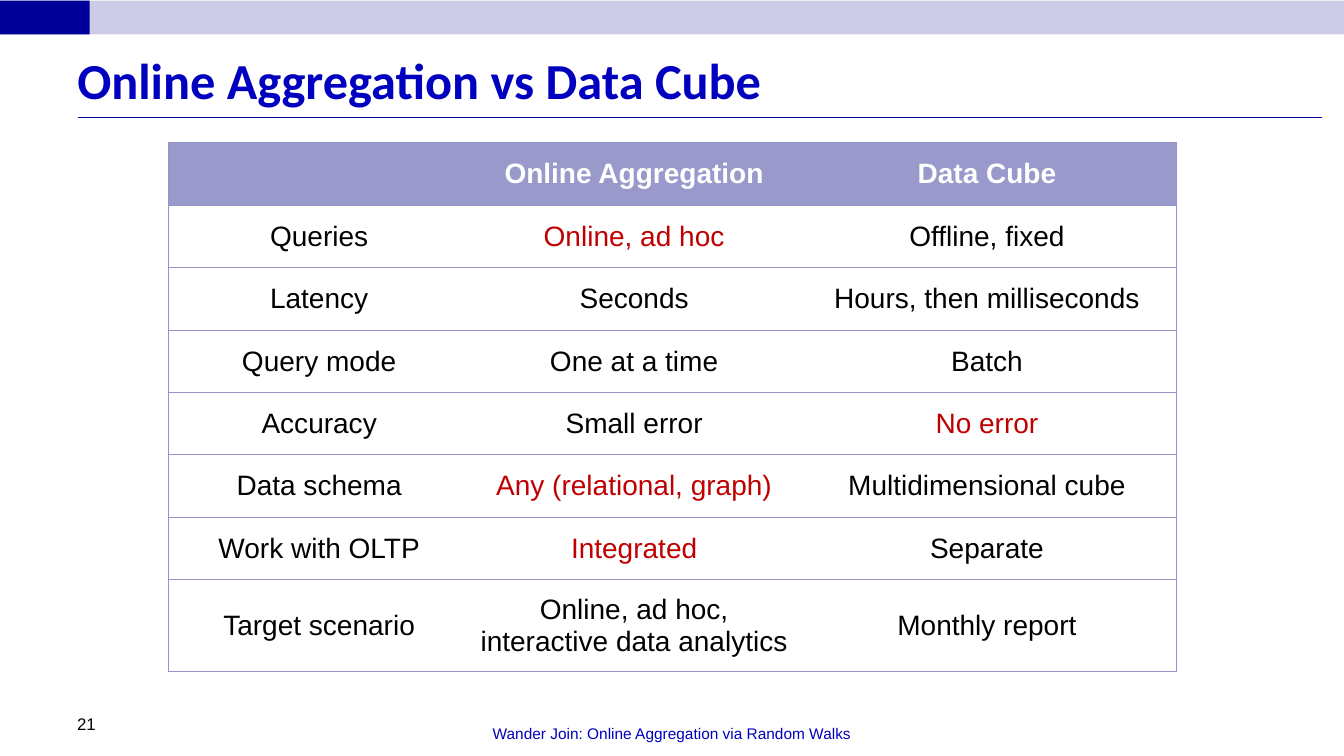
import pptx
import pptx.util
import pptx.dml.color
import pptx.enum.shapes
import pptx.enum.text
import pptx.oxml
import pptx.oxml.ns
from lxml import etree

Pt = pptx.util.Pt
RGBColor = pptx.dml.color.RGBColor
ALIGN = pptx.enum.text.PP_ALIGN
ANCHOR = pptx.enum.text.MSO_ANCHOR

NAVY = RGBColor(0x00, 0x00, 0x99)
BLUE = RGBColor(0x00, 0x00, 0xBE)
LAVENDER = RGBColor(0xCC, 0xCC, 0xE6)
HEADER = RGBColor(0x99, 0x99, 0xCC)
RULE = RGBColor(0x94, 0x94, 0xC9)
RED = RGBColor(0xC0, 0x00, 0x00)
BLACK = RGBColor(0x00, 0x00, 0x00)
WHITE = RGBColor(0xFF, 0xFF, 0xFF)


def write(tf, text, size=20, font="Arial", color=BLACK, bold=False,
          align=ALIGN.LEFT, anchor=ANCHOR.MIDDLE):
    tf.word_wrap = True
    tf.vertical_anchor = anchor
    p = tf.paragraphs[0]
    p.alignment = align
    r = p.add_run()
    r.text = text
    r.font.size = Pt(size)
    r.font.name = font
    r.font.bold = bold
    r.font.color.rgb = color


class Deck:
    """Holds the table style and the current slide."""
    rule_color = RULE
    rule_width = 0.75

    def __init__(self, prs):
        self.s = prs.slides.add_slide(prs.slide_layouts[5])

    def bar(self, x, y, w, h, color):
        sp = self.s.shapes.add_shape(
            pptx.enum.shapes.MSO_SHAPE.RECTANGLE, Pt(x), Pt(y), Pt(w), Pt(h))
        sp.shadow.inherit = False
        sp.fill.solid()
        sp.fill.fore_color.rgb = color
        sp.line.fill.background()

    def line(self, x1, y1, x2, y2, color):
        c = self.s.shapes.add_connector(
            pptx.enum.shapes.MSO_CONNECTOR.STRAIGHT, Pt(x1), Pt(y1), Pt(x2), Pt(y2))
        c.line.color.rgb = color
        c.line.width = Pt(self.rule_width)
        etree.SubElement(c.element.spPr, pptx.oxml.ns.qn("a:effectLst"))

    def title(self, x, y, w, h, text, **fmt):
        sp = self.s.shapes.title
        sp.left, sp.top, sp.width, sp.height = Pt(x), Pt(y), Pt(w), Pt(h)
        write(sp.text_frame, text, **fmt)

    def text(self, x, y, w, h, text, **fmt):
        sp = self.s.shapes.add_textbox(Pt(x), Pt(y), Pt(w), Pt(h))
        write(sp.text_frame, text, **fmt)

    def border(self, cell, side, visible):
        fill = (f'<a:solidFill><a:srgbClr val="{self.rule_color}"/></a:solidFill>'
                if visible else "<a:noFill/>")
        cell._tc.get_or_add_tcPr().append(pptx.oxml.parse_xml(
            f'<a:ln{side} {pptx.oxml.ns.nsdecls("a")} w="{Pt(self.rule_width)}">'
            f'{fill}</a:ln{side}>'))

    def table(self, x, y, widths, heights, rows, highlights):
        table = self.s.shapes.add_table(
            len(rows), len(widths), Pt(x), Pt(y),
            Pt(sum(widths)), Pt(sum(heights))).table
        table.horz_banding = False
        for column, width in zip(table.columns, widths):
            column.width = Pt(width)
        for row, height in zip(table.rows, heights):
            row.height = Pt(height)
        for i, values in enumerate(rows):
            for j, value in enumerate(values):
                cell = table.cell(i, j)
                # Borders come before the fill in the cell properties
                self.border(cell, "L", j == 0)
                self.border(cell, "R", j == len(widths) - 1)
                self.border(cell, "T", True)
                self.border(cell, "B", True)
                cell.fill.solid()
                cell.fill.fore_color.rgb = HEADER if i == 0 else WHITE
                cell.vertical_anchor = ANCHOR.MIDDLE
                if value:
                    color = (WHITE if i == 0 else
                             RED if value in highlights else BLACK)
                    write(cell.text_frame, value, color=color, bold=i == 0,
                          align=ALIGN.CENTER, anchor=None)


def main():
    prs = pptx.Presentation()
    prs.slide_width, prs.slide_height = Pt(960), Pt(540)
    deck = Deck(prs)

    # Top band and title
    deck.bar(0, 0.5, 960, 24, LAVENDER)
    deck.bar(0, 0.5, 64, 24, NAVY)
    deck.line(56, 84, 944, 84, NAVY)
    deck.title(48, 24, 912, 66, "Online Aggregation vs Data Cube",
               size=36, font="Calibri", color=BLUE, bold=True)

    # Footer
    deck.text(248, 498, 464, 36, "Wander Join: Online Aggregation via Random Walks",
              size=11, color=BLUE, align=ALIGN.CENTER, anchor=ANCHOR.BOTTOM)
    deck.text(48, 492, 224, 36, "21", size=12, anchor=ANCHOR.BOTTOM)

    # Comparison table
    rows = [
        ("", "Online Aggregation", "Data Cube"),
        ("Queries", "Online, ad hoc", "Offline, fixed"),
        ("Latency", "Seconds", "Hours, then milliseconds"),
        ("Query mode", "One at a time", "Batch"),
        ("Accuracy", "Small error", "No error"),
        ("Data schema", "Any (relational, graph)", "Multidimensional cube"),
        ("Work with OLTP", "Integrated", "Separate"),
        ("Target scenario", "Online, ad hoc, interactive data analytics",
         "Monthly report"),
    ]
    highlights = {"Online, ad hoc", "No error", "Any (relational, graph)", "Integrated"}
    deck.table(120, 102, [216, 234, 270], [44.6] * 7 + [65.8], rows, highlights)

    prs.save("out.pptx")


if __name__ == "__main__":
    main()
